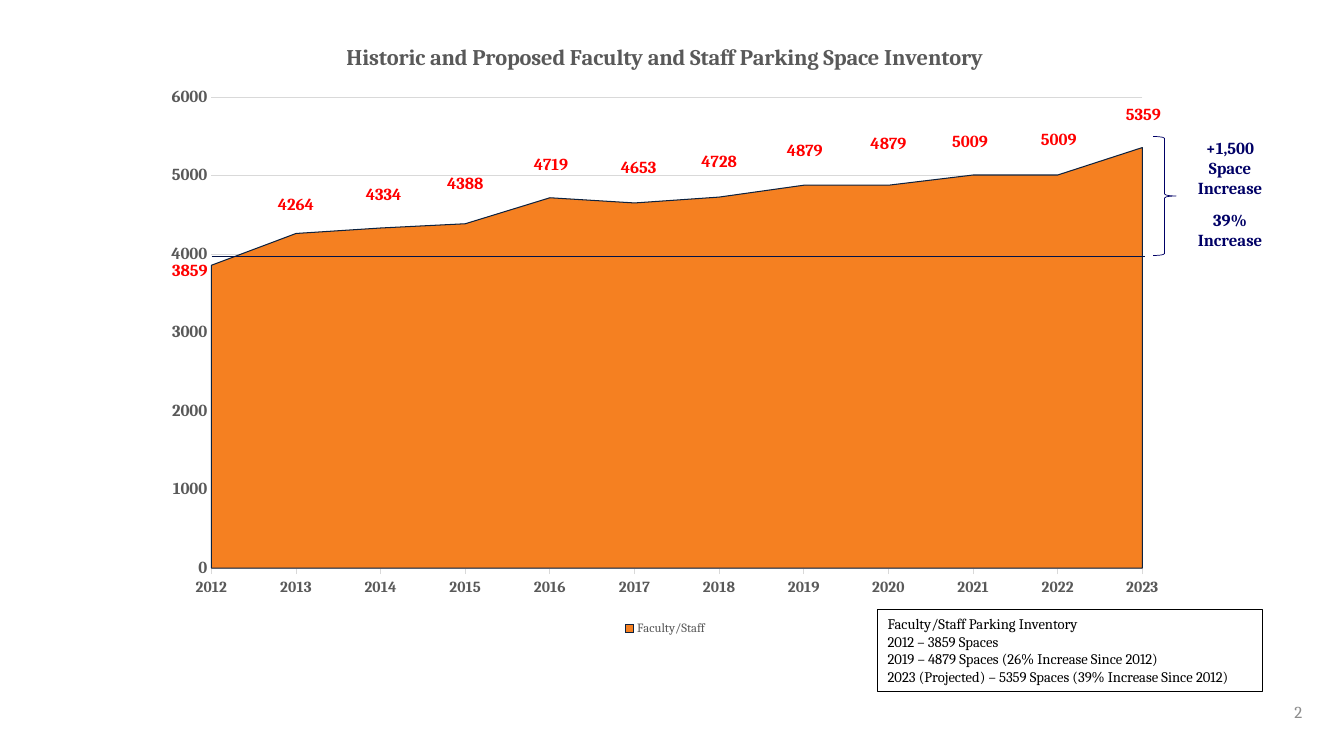
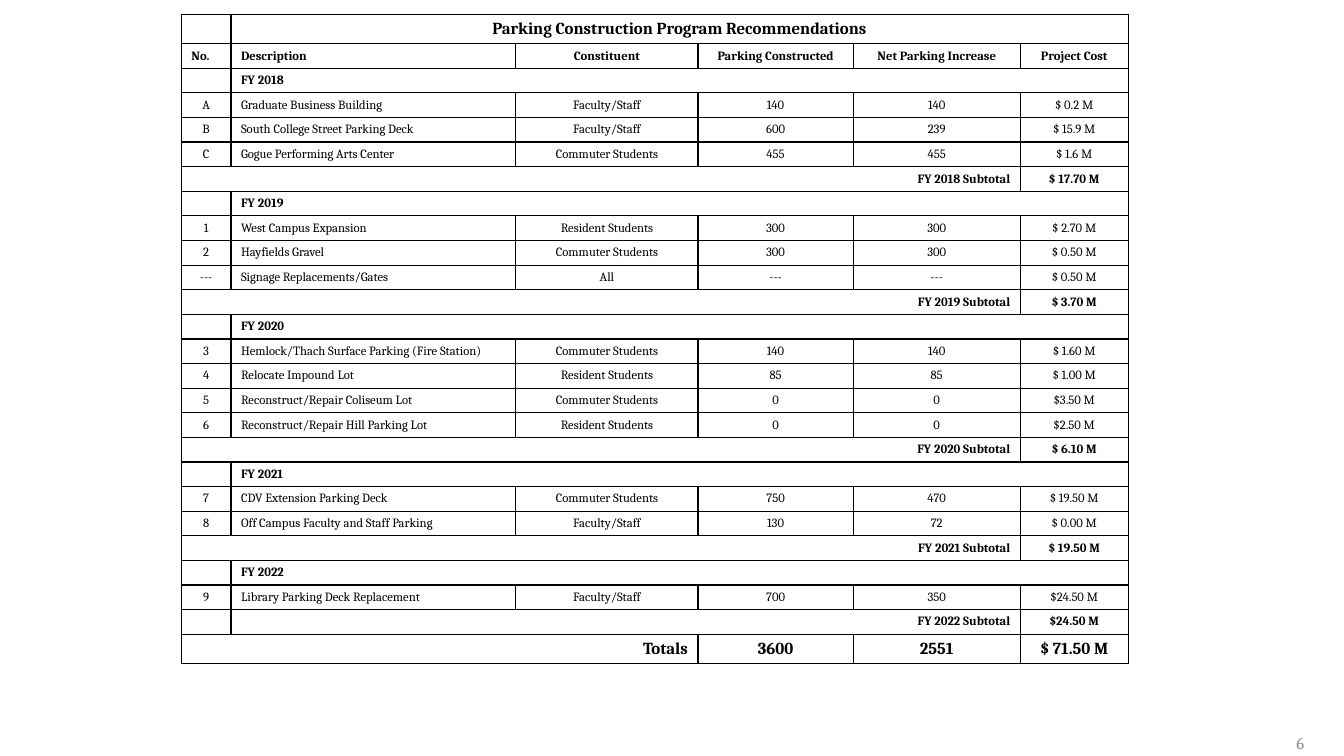
from dataclasses import dataclass

from lxml import etree
from pptx import Presentation
from pptx.chart.data import CategoryChartData
from pptx.dml.color import RGBColor
from pptx.enum import chart as chart_enum, shapes, text
from pptx.oxml import ns
from pptx.util import Cm, Pt

LEFT, CENTER, RIGHT = text.PP_ALIGN.LEFT, text.PP_ALIGN.CENTER, text.PP_ALIGN.RIGHT
MIDDLE = text.MSO_ANCHOR.MIDDLE


@dataclass(frozen=True)
class Theme:
    font: str = "Cambria"
    black: str = "000000"
    white: str = "FFFFFF"
    footer_gray: str = "8C8C8C"
    chart_gray: str = "595959"
    grid_gray: str = "D9D9D9"
    area: str = "F58021"
    area_edge: str = "0D223F"
    label_red: str = "FF0000"
    baseline: str = "011247"
    navy: str = "000066"
    chart_title: float = 16
    large: float = 12
    axis: float = 11
    note: float = 10.5
    small: float = 9
    thin: float = 0.5
    line: float = 0.75
    border: float = 1


THEME = Theme()

# Year, spaces, label shift from its point in percent of chart width and height
INVENTORY = [
    ("2012", 3859, -2.1, 1), ("2013", 4264, 0, -4.5), ("2014", 4334, 0.3, -5.3),
    ("2015", 4388, 0, -6.4), ("2016", 4719, 0.1, -5.2), ("2017", 4653, 0.4, -5.7),
    ("2018", 4728, 0, -5.7), ("2019", 4879, 0.1, -5.5), ("2020", 4879, 0, -6.7),
    ("2021", 5009, -0.3, -5.3), ("2022", 5009, 0.1, -5.7), ("2023", 5359, 0.1, -5.2),
]
AXIS_MAXIMUM = 6000
PLOT_HEIGHT = 76.35  # percent of chart height

INVENTORY_NOTE = [
    "Faculty/Staff Parking Inventory",
    "2012 – 3859 Spaces",
    "2019 – 4879 Spaces (26% Increase Since 2012)",
    "2023 (Projected) – 5359 Spaces (39% Increase Since 2012)",
]

HEADINGS = ["No.", "Description", "Constituent", "Parking Constructed",
            "Net Parking Increase", "Project Cost"]
COLUMN_WIDTHS = [1.25, 7.18, 4.59, 3.91, 4.21, 2.72]
COMMUTERS, RESIDENTS, STAFF = "Commuter Students", "Resident Students", "Faculty/Staff"

# Fiscal year, subtotal, projects
PROGRAM = [
    ("FY 2018", "$ 17.70 M", [
        ("A", "Graduate Business Building", STAFF, "140", "140", "$ 0.2 M"),
        ("B", "South College Street Parking Deck", STAFF, "600", "239", "$ 15.9 M"),
        ("C", "Gogue Performing Arts Center", COMMUTERS, "455", "455", "$ 1.6 M")]),
    ("FY 2019", "$ 3.70 M", [
        ("1", "West Campus Expansion", RESIDENTS, "300", "300", "$ 2.70 M"),
        ("2", "Hayfields Gravel", COMMUTERS, "300", "300", "$ 0.50 M"),
        ("---", "Signage Replacements/Gates", "All", "---", "---", "$ 0.50 M")]),
    ("FY 2020", "$ 6.10 M", [
        ("3", "Hemlock/Thach Surface Parking (Fire Station)", COMMUTERS,
         "140", "140", "$ 1.60 M"),
        ("4", "Relocate Impound Lot", RESIDENTS, "85", "85", "$ 1.00 M"),
        ("5", "Reconstruct/Repair Coliseum Lot", COMMUTERS, "0", "0", "$3.50 M"),
        ("6", "Reconstruct/Repair Hill Parking Lot", RESIDENTS, "0", "0", "$2.50 M")]),
    ("FY 2021", "$ 19.50 M", [
        ("7", "CDV Extension Parking Deck", COMMUTERS, "750", "470", "$ 19.50 M"),
        ("8", "Off Campus Faculty and Staff Parking", STAFF, "130", "72", "$ 0.00 M")]),
    ("FY 2022", "$24.50 M", [
        ("9", "Library Parking Deck Replacement", STAFF, "700", "350", "$24.50 M")]),
]


# Shared helpers
def style_font(font, size, color=THEME.black, bold=False):
    font.name, font.size, font.bold = THEME.font, Pt(size), bold
    font.color.rgb = RGBColor.from_string(color)


def style_line(line, color, width):
    line.color.rgb = RGBColor.from_string(color)
    line.width = Pt(width)


def write(frame, lines, size, color=THEME.black, bold=False, align=LEFT, gap=0):
    frame.word_wrap = True
    for index, line in enumerate(lines):
        paragraph = frame.add_paragraph() if index else frame.paragraphs[0]
        paragraph.alignment = align
        if index and gap:
            paragraph.space_before = Pt(gap)
        run = paragraph.add_run()
        run.text = line
        style_font(run.font, size, color, bold)


def add_text(slide, left, top, width, height, lines, size, **style):
    box = slide.shapes.add_textbox(Cm(left), Cm(top), Cm(width), Cm(height))
    write(box.text_frame, lines, size, **style)
    return box


def add_outlined(slide, kind, left, top, width, height, color, line_width, fill=None):
    shape = slide.shapes.add_shape(kind, Cm(left), Cm(top), Cm(width), Cm(height))
    shape.shadow.inherit = False
    if fill:
        shape.fill.solid()
        shape.fill.fore_color.rgb = RGBColor.from_string(fill)
    else:
        shape.fill.background()
    style_line(shape.line, color, line_width)
    return shape


def add_page_number(slide, number, left, top, width):
    box = add_text(slide, left, top, width, 1.02, [number], THEME.large,
                   color=THEME.footer_gray, align=RIGHT)
    box.text_frame.vertical_anchor = MIDDLE


# Chart
def set_layout(parent, after=None, modes=(), **percents):
    """Place a chart part, in percent of the chart, behind the given child."""
    for old in parent.findall(ns.qn("c:layout")):
        parent.remove(old)
    layout = etree.Element(ns.qn("c:layout"))
    manual = etree.SubElement(layout, ns.qn("c:manualLayout"))
    places = [(name, f"{percent / 100:.4f}") for name, percent in percents.items()]
    for name, value in [*modes, *places]:
        etree.SubElement(manual, ns.qn(f"c:{name}"), val=value)
    if after is None:
        parent.insert(0, layout)
    else:
        after.addnext(layout)


def add_value_labels(series):
    labels = series.data_labels
    labels.show_value = True
    style_font(labels.font, THEME.large, THEME.label_red, True)
    for leader in labels._element.findall(ns.qn("c:showLeaderLines")):
        leader.set("val", "0")
    for index, (_, spaces, right, down) in enumerate(INVENTORY):
        style_font(series.points[index].data_label.font,
                   THEME.large, THEME.label_red, True)
        label = labels._element.findall(ns.qn("c:dLbl"))[index]
        # Labels start halfway up the area, so lift them to its top edge
        lift = spaces / AXIS_MAXIMUM * PLOT_HEIGHT / 2
        set_layout(label, label.find(ns.qn("c:idx")), x=right, y=down - lift)


def add_inventory_chart(slide):
    data = CategoryChartData()
    data.categories = [year for year, *_ in INVENTORY]
    data.add_series("Faculty/Staff", [spaces for _, spaces, *_ in INVENTORY])
    chart = slide.shapes.add_chart(
        chart_enum.XL_CHART_TYPE.AREA_STACKED,
        Cm(3.81), Cm(0.58), Cm(25.91), Cm(15.54), data).chart
    style_font(chart.font, 10)

    # Title and legend
    edges = [("xMode", "edge"), ("yMode", "edge")]
    chart.has_title = True
    title = chart.chart_title
    write(title.text_frame, ["Historic and Proposed Faculty and Staff Parking Space Inventory"],
          THEME.chart_title, color=THEME.chart_gray, bold=True, align=CENTER)
    title.include_in_layout = False
    set_layout(title._element, title._element.find(ns.qn("c:tx")), edges, x=18.6, y=2.6)
    chart.has_legend = True
    chart.legend.position = chart_enum.XL_LEGEND_POSITION.BOTTOM
    chart.legend.include_in_layout = False
    style_font(chart.legend.font, THEME.small, THEME.chart_gray)

    # Axes
    marks = chart_enum.XL_TICK_MARK
    years, spaces = chart.category_axis, chart.value_axis
    for axis, size, mark in ((years, THEME.axis, marks.OUTSIDE),
                             (spaces, THEME.large, marks.NONE)):
        style_font(axis.tick_labels.font, size, THEME.chart_gray, True)
        axis.major_tick_mark, axis.minor_tick_mark = mark, marks.NONE
    years.has_major_gridlines = False
    style_line(years.format.line, THEME.grid_gray, THEME.line)
    spaces.minimum_scale, spaces.maximum_scale, spaces.major_unit = 0, AXIS_MAXIMUM, 1000
    spaces.format.line.fill.background()
    spaces.has_major_gridlines = True
    style_line(spaces.major_gridlines.format.line, THEME.grid_gray, THEME.line)

    # Area and its value labels
    plot = chart.plots[0]
    plot.vary_by_categories = False
    series = plot.series[0]
    series.format.fill.solid()
    series.format.fill.fore_color.rgb = RGBColor.from_string(THEME.area)
    style_line(series.format.line, THEME.area_edge, THEME.line)
    add_value_labels(series)

    plot_area = chart._chartSpace.find(".//" + ns.qn("c:plotArea"))
    set_layout(plot_area, None, [("layoutTarget", "inner"), *edges],
               x=5.86, y=12.05, w=90.55, h=PLOT_HEIGHT)


def build_inventory_slide(slide):
    add_page_number(slide, "2", 32.28, 17.42, 0.79)
    add_inventory_chart(slide)

    # Inventory note
    note = add_outlined(slide, shapes.MSO_SHAPE.RECTANGLE, 22.12, 15.37, 9.7, 2.06,
                        THEME.black, THEME.line, THEME.white)
    note.text_frame.vertical_anchor = text.MSO_ANCHOR.TOP
    write(note.text_frame, INVENTORY_NOTE, THEME.note)

    # Starting level and increase
    baseline = slide.shapes.add_connector(
        shapes.MSO_CONNECTOR.STRAIGHT, Cm(5.33), Cm(6.45), Cm(28.85), Cm(6.45))
    style_line(baseline.line, THEME.baseline, THEME.thin)
    etree.SubElement(baseline._element.spPr, ns.qn("a:effectLst"))
    add_outlined(slide, shapes.MSO_SHAPE.RIGHT_BRACE, 29.06, 3.44, 0.58, 3,
                 THEME.navy, THEME.thin)
    add_text(slide, 29.77, 3.35, 2.46, 3.2, ["+1,500 Space Increase", "39% Increase"],
             THEME.large, color=THEME.navy, bold=True, align=CENTER, gap=8)


# Table
def style_cell(cell):
    properties = cell._tc.get_or_add_tcPr()
    for side in ("lnL", "lnR", "lnT", "lnB"):
        border = etree.SubElement(properties, ns.qn(f"a:{side}"),
                                  w=str(Pt(THEME.border)))
        fill = etree.SubElement(border, ns.qn("a:solidFill"))
        etree.SubElement(fill, ns.qn("a:srgbClr"), val=THEME.black)
    cell.fill.background()
    cell.vertical_anchor = MIDDLE
    cell.margin_top = cell.margin_bottom = Cm(0.05)
    if not cell.text_frame.text:
        etree.SubElement(cell.text_frame.paragraphs[0]._p, ns.qn("a:endParaRPr"),
                         sz=str(Pt(THEME.small).centipoints))


def program_rows():
    """Each row: cells as (text, columns spanned, alignment), bold, size."""
    blank = ("", 1, LEFT)
    yield [blank, ("Parking Construction Program Recommendations", 5, CENTER)], True, THEME.large
    yield [(heading, 1, LEFT if column < 2 else CENTER)
           for column, heading in enumerate(HEADINGS)], True, THEME.small
    for year, subtotal, projects in PROGRAM:
        yield [blank, (year, 5, LEFT)], True, THEME.small
        for project in projects:
            yield [(value, 1, LEFT if column == 1 else CENTER)
                   for column, value in enumerate(project)], False, THEME.small
        label = f"{year} Subtotal"
        is_last = year == PROGRAM[-1][0]
        start = [blank, (label, 4, RIGHT)] if is_last else [(label, 5, RIGHT)]
        yield start + [(subtotal, 1, CENTER)], True, THEME.small
    yield [("Totals", 3, RIGHT), ("3600", 1, CENTER), ("2551", 1, CENTER),
           ("$ 71.50 M", 1, CENTER)], True, THEME.large


def build_program_slide(slide):
    add_page_number(slide, "6", 28.9, 18.22, 4.22)
    rows = list(program_rows())
    table = slide.shapes.add_table(len(rows), len(COLUMN_WIDTHS), Cm(4.57), Cm(0.36),
                                   Cm(sum(COLUMN_WIDTHS)), Cm(16.5)).table
    table.first_row = table.horz_banding = False
    for column, width in zip(table.columns, COLUMN_WIDTHS):
        column.width = Cm(width)
    for index, (cells, bold, size) in enumerate(rows):
        table.rows[index].height = Cm(0.74 if size == THEME.large else 0.62)
        column = 0
        for value, span, align in cells:
            cell = table.cell(index, column)
            if span > 1:
                cell.merge(table.cell(index, column + span - 1))
            if value:
                write(cell.text_frame, [value], size, bold=bold, align=align)
            column += span
    for cell in table.iter_cells():
        style_cell(cell)


def main():
    presentation = Presentation()
    presentation.slide_width, presentation.slide_height = Cm(33.87), Cm(19.05)
    for build in (build_inventory_slide, build_program_slide):
        build(presentation.slides.add_slide(presentation.slide_layouts[6]))
    presentation.save("out.pptx")


if __name__ == "__main__":
    main()
